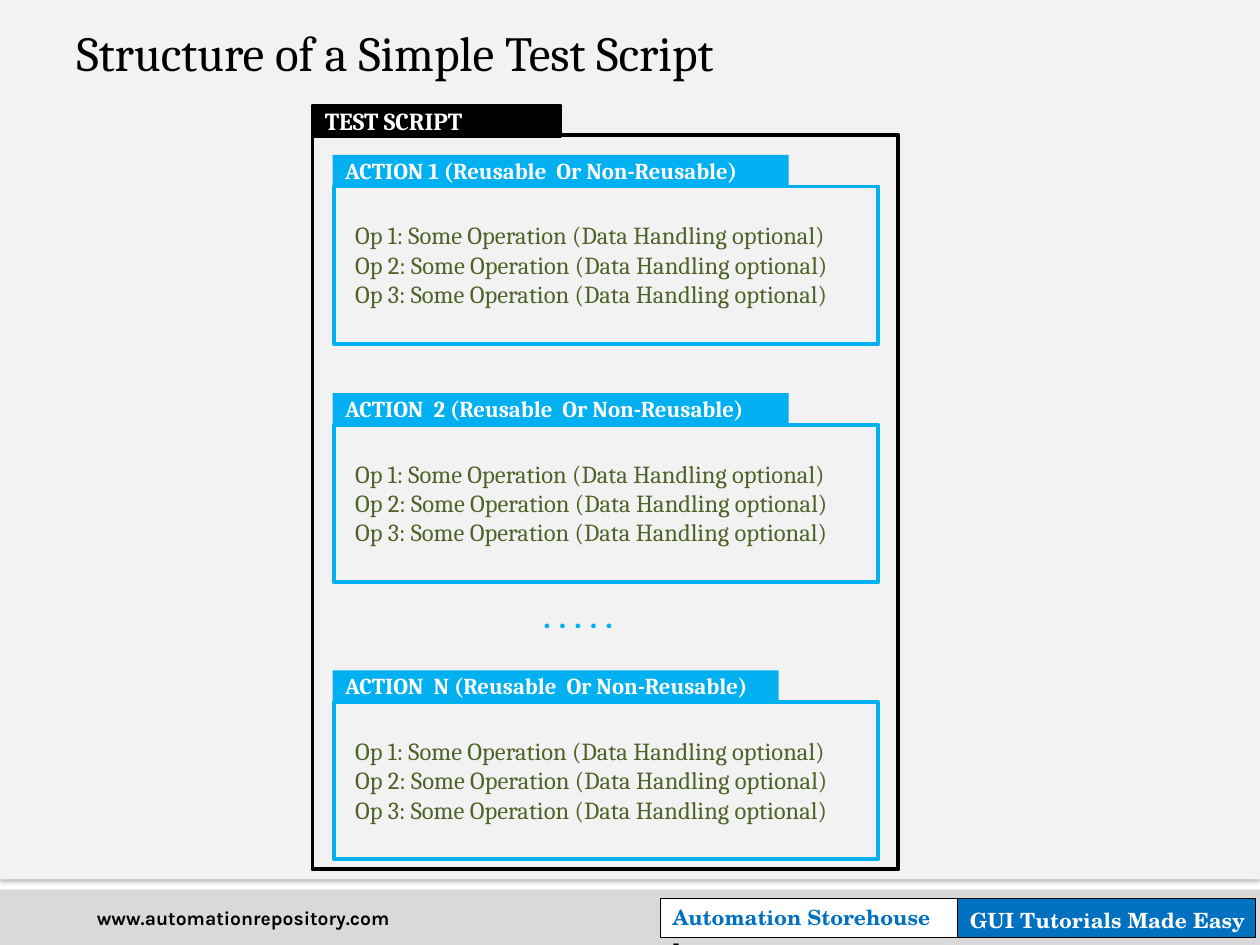
from lxml import etree
from pptx import Presentation
from pptx.dml.color import RGBColor
from pptx.enum import shapes, text
from pptx.oxml import ns
from pptx.util import Inches, Pt

THEME = {
    "black": "000000", "white": "FFFFFF", "panel": "F2F2F2", "footer": "D9D9D9",
    "cyan": "00B0F0", "blue": "0070C0", "green": "4F6228",
    "body": "Cambria", "brand": "TeX Gyre Schola", "web": "Karla", "dots": "Calibri",
    "title_size": 28, "dots_size": 18, "body_size": 14, "action_size": 13,
    "brand_size": 12, "web_size": 11,
}

TITLE = "Structure of a Simple Test Script"
SCRIPT = "TEST SCRIPT"
ACTIONS = [
    ("ACTION 1 (Reusable  Or Non-Reusable)", 1.23, 3.62),
    ("ACTION  2 (Reusable  Or Non-Reusable)", 3.12, 3.62),
    ("ACTION  N (Reusable  Or Non-Reusable)", 5.32, 3.54),
]
OPERATIONS = [f"Op {n}: Some Operation (Data Handling optional)" for n in (1, 2, 3)]
DOTS = ". . . . ."
WEBSITE = "www.automationrepository.com"
BRAND = "Automation Storehouse"
TAGLINE = "GUI Tutorials Made Easy"


def rgb(name):
    return RGBColor.from_string(THEME[name])


def write(shape, *lines, font="body", size="body_size", color="black", bold=False,
          align=text.PP_ALIGN.LEFT, anchor=text.MSO_ANCHOR.TOP):
    frame = shape.text_frame
    frame.word_wrap = True
    frame.vertical_anchor = anchor
    for index, line in enumerate(lines):
        paragraph = frame.add_paragraph() if index else frame.paragraphs[0]
        paragraph.alignment = align
        run = paragraph.add_run()
        run.text = line
        run.font.name = THEME[font]
        run.font.size = Pt(THEME[size])
        run.font.bold = bold
        run.font.color.rgb = rgb(color)
    return frame


def add_box(parent, place, fill=None, line=None, width=0):
    box = parent.add_shape(shapes.MSO_SHAPE.RECTANGLE, *map(Inches, place))
    box.shadow.inherit = False
    if fill:
        box.fill.solid()
        box.fill.fore_color.rgb = rgb(fill)
    else:
        box.fill.background()
    if line:
        box.line.color.rgb = rgb(line)
        box.line.width = Pt(width)
    else:
        box.line.fill.background()
    return box


def add_label(parent, place, *lines, **style):
    return write(parent.add_textbox(*map(Inches, place)), *lines, **style)


def cast_shadow(box):
    effects = box._element.spPr.find(ns.qn("a:effectLst"))
    shadow = etree.SubElement(effects, ns.qn("a:outerShdw"), blurRad=str(Pt(3.1)),
                              dist=str(Pt(1.6)), dir="5400000", algn="t", rotWithShape="0")
    color = etree.SubElement(shadow, ns.qn("a:srgbClr"), val=THEME["black"])
    etree.SubElement(color, ns.qn("a:alpha"), val="38000")


def add_footer(parent):
    add_box(parent, (0, 7.06, 10, 0.44), "footer")
    add_box(parent, (7.6, 7.13, 2.36, 0.31), "blue", "black", 0.25)
    brand = add_box(parent, (5.24, 7.13, 2.36, 0.31), "white", "black", 0.75)
    brand_style = {"font": "brand", "size": "brand_size", "bold": True}
    frame = write(brand, BRAND, "-", color="blue", **brand_style)
    frame.paragraphs[1].runs[0].font.color.rgb = rgb("black")
    add_label(parent, (7.6, 7.15, 2.44, 0.3), TAGLINE, color="white", **brand_style)
    add_label(parent, (0.67, 7.14, 4.88, 0.29), WEBSITE,
              font="web", size="web_size", bold=True)


def add_diagram(parent):
    heading = {"color": "white", "bold": True, "anchor": text.MSO_ANCHOR.MIDDLE}
    add_box(parent, (2.48, 1.07, 4.65, 5.83), line="black", width=2.25)
    script_tab = add_box(parent, (2.48, 0.84, 1.97, 0.24), "black", "black", 2)
    write(script_tab, SCRIPT, **heading)
    for name, top, tab_width in ACTIONS:
        add_box(parent, (2.65, top + 0.25, 4.32, 1.25), line="cyan", width=2.25)
        action_tab = add_box(parent, (2.64, top, tab_width, 0.24), "cyan")
        write(action_tab, name, size="action_size", **heading)
        add_label(parent, (2.72, top + 0.47, 4.17, 0.81), *OPERATIONS, color="green")
    add_label(parent, (4.21, 4.69, 0.94, 0.4), DOTS,
              font="dots", size="dots_size", color="cyan", bold=True)


def main():
    deck = Presentation()
    deck.slide_width, deck.slide_height = Inches(10), Inches(7.5)
    slide = deck.slides.add_slide(deck.slide_layouts[6])
    add_footer(slide.shapes)
    cast_shadow(add_box(slide.shapes, (0, 0, 10, 6.98), "panel"))
    add_label(slide.shapes, (0.51, 0.13, 8.98, 0.57), TITLE,
              size="title_size", align=text.PP_ALIGN.JUSTIFY)
    add_diagram(slide.shapes.add_group_shape().shapes)
    deck.save("out.pptx")


if __name__ == "__main__":
    main()
